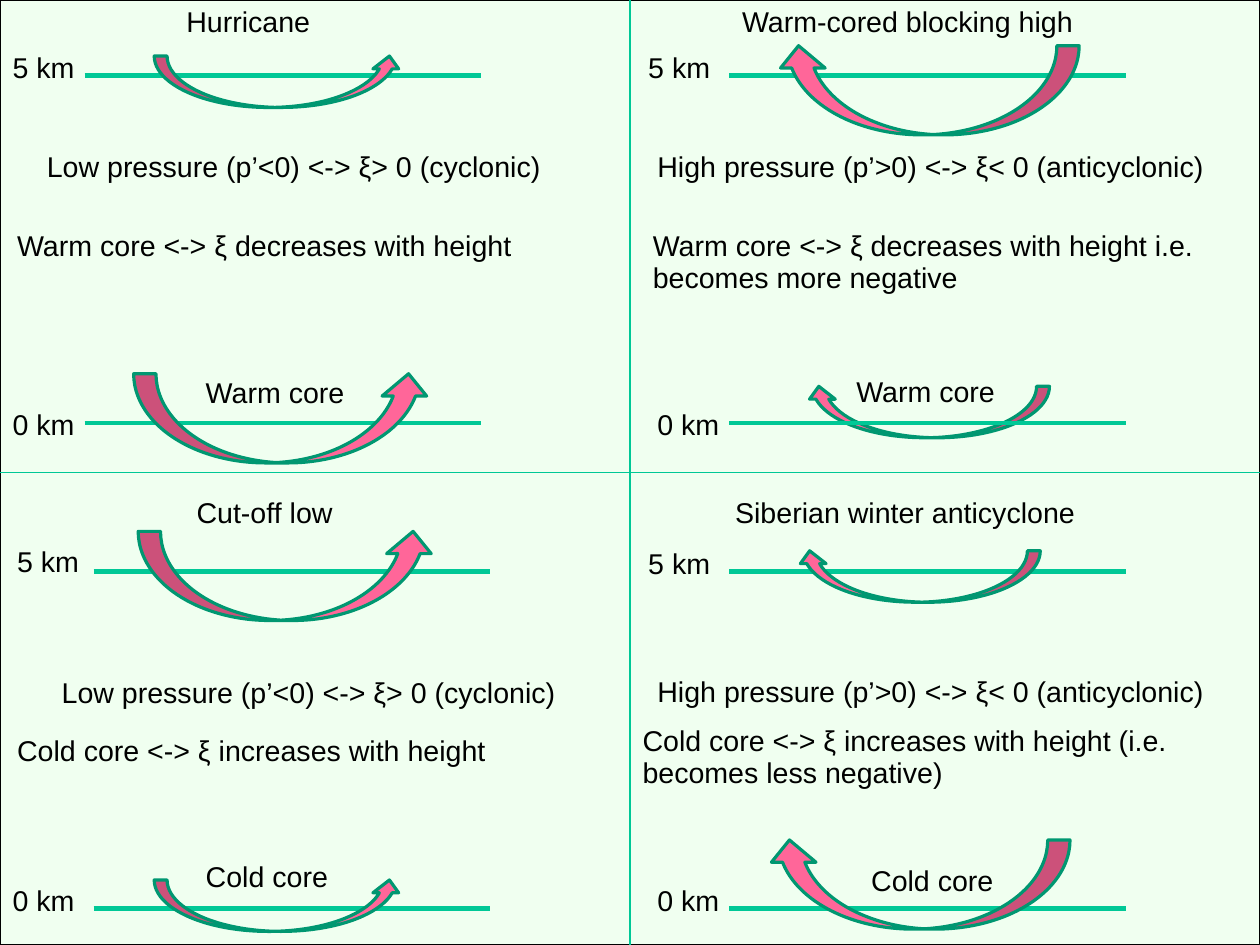
from dataclasses import dataclass

import pptx
import pptx.dml.color
import pptx.enum.shapes
import pptx.enum.text
import pptx.oxml.ns
import pptx.util
from lxml import etree

SLIDE_WIDTH, SLIDE_HEIGHT = pptx.util.Cm(28), pptx.util.Cm(21)
CELL = pptx.util.Inches(0.1)
COLUMNS, ROWS = SLIDE_WIDTH / CELL, SLIDE_HEIGHT / CELL
PANEL_COLUMNS, PANEL_ROWS = COLUMNS / 2, ROWS / 2
LINE_HEIGHT = 3.9
LEVEL_COLUMNS = 34.7
MINT, GREEN, DARK_GREEN, PINK, BLACK = "F0FFF0", "00C896", "009771", "FF6699", "000000"


@dataclass(frozen=True)
class Label:
    text: str
    column: float
    row: float
    columns: float
    rows: float = LINE_HEIGHT


@dataclass(frozen=True)
class Flow:
    column: float
    row: float
    columns: float
    rows: float
    behind: bool = False


@dataclass(frozen=True)
class Panel:
    column: int
    row: int
    anticyclonic: bool
    heading: Label
    level_column: float
    level_rows: tuple[float, float]
    labels: tuple[Label, ...]
    flows: tuple[Flow, ...]


LOW_PRESSURE = "Low pressure (p’<0) <-> ξ> 0 (cyclonic)"
HIGH_PRESSURE = "High pressure (p’>0) <-> ξ< 0 (anticyclonic)"

PANELS = (
    Panel(
        0, 0, False, Label("Hurricane", 15.2, 0, 20), 7.4, (6.6, 37),
        (
            Label("5 km", 0, 4, 10),
            Label("0 km", 0, 35.3, 10),
            Label("Warm core", 16.9, 32.5, 14.8),
            Label(LOW_PRESSURE, 3, 12.7, 47.7),
            Label("Warm core <-> ξ decreases with height", 0.4, 19.6, 54.7),
        ),
        (Flow(13.5, 4.9, 21.7, 4.5), Flow(11.7, 32.7, 26, 7.8)),
    ),
    Panel(
        1, 0, True, Label("Warm-cored blocking high", 8.7, 0, 33), 8.7, (6.6, 37),
        (
            Label("5 km", 0.5, 4, 10),
            Label("0 km", 1.3, 35.3, 10),
            Label("Warm core", 18.7, 32.4, 14.8),
            Label(HIGH_PRESSURE, 1.3, 12.7, 51.6),
            Label("Warm core <-> ξ decreases with height i.e. becomes more negative",
                  0.9, 19.6, 54.7, 6.7),
        ),
        (Flow(12.8, 4, 26.5, 7.8), Flow(15.4, 33.8, 21.3, 4.5, behind=True)),
    ),
    Panel(
        0, 1, False, Label("Cut-off low", 16.1, 1.65, 24.3), 8.2, (8.65, 38.15),
        (
            Label("5 km", 0.4, 5.95, 10),
            Label("0 km", 0, 35.55, 10),
            Label("Cold core", 16.9, 33.45, 14.8),
            Label(LOW_PRESSURE, 4.3, 17.35, 47.7),
            Label("Cold core <-> ξ increases with height", 0.4, 22.45, 54.7),
        ),
        (Flow(12.1, 5.15, 26, 7.8), Flow(13.5, 35.65, 21.7, 4.5)),
    ),
    Panel(
        1, 1, True, Label("Siberian winter anticyclone", 8.1, 1.65, 38.8), 8.7, (8.65, 38.15),
        (
            Label("5 km", 0.5, 6.05, 10),
            Label("0 km", 1.3, 35.55, 10),
            Label("Cold core", 20, 33.85, 14.8),
            Label(HIGH_PRESSURE, 1.3, 17.25, 51.6),
            Label("Cold core <-> ξ increases with height (i.e. becomes less negative)",
                  0, 21.55, 54.7, 6.7),
        ),
        (Flow(14.6, 6.85, 21.3, 4.5), Flow(12, 32.15, 26.5, 7.8)),
    ),
)


def cells(count: float) -> int:
    return round(count * CELL)


def colour(value: str) -> pptx.dml.color.RGBColor:
    return pptx.dml.color.RGBColor.from_string(value)


def panel_area(panel: Panel, item: Label | Flow) -> tuple[int, int, int, int]:
    return (
        cells(panel.column * PANEL_COLUMNS + item.column),
        cells(panel.row * PANEL_ROWS + item.row),
        cells(item.columns),
        cells(item.rows),
    )


def write_label(box, text: str) -> None:
    frame = box.text_frame
    frame.text = text
    frame.word_wrap = True
    frame.auto_size = pptx.enum.text.MSO_AUTO_SIZE.SHAPE_TO_FIT_TEXT
    frame.vertical_anchor = pptx.enum.text.MSO_ANCHOR.TOP
    frame.margin_left = frame.margin_right = pptx.util.Inches(0.11)
    frame.margin_top = frame.margin_bottom = pptx.util.Inches(0.06)
    para = frame.paragraphs[0]
    para.alignment = pptx.enum.text.PP_ALIGN.LEFT
    para.line_spacing = 0.93
    para.space_before = pptx.util.Pt(0)
    span = para.runs[0]
    span.font.name = "Arial"
    span.font.size = pptx.util.Pt(18)
    span.font.bold = False
    span.font.color.rgb = colour(BLACK)


def fill_heading(box, panel: Panel) -> None:
    box.left, box.top, box.width, box.height = panel_area(panel, panel.heading)
    write_label(box, panel.heading.text)
    properties = box.text_frame.paragraphs[0]._p.get_or_add_pPr()
    properties.set("marL", "0")
    properties.set("indent", "0")
    etree.SubElement(properties, pptx.oxml.ns.qn("a:buNone"))


def add_line(page, start: tuple[float, float], end: tuple[float, float], width: float):
    line = page.shapes.add_connector(
        pptx.enum.shapes.MSO_CONNECTOR.STRAIGHT, *map(cells, start + end))
    line.line.color.rgb = colour(GREEN)
    line.line.width = pptx.util.Pt(width)
    etree.SubElement(line.element.spPr, pptx.oxml.ns.qn("a:effectLst"))
    return line


def add_outlined(page, kind, area: tuple[int, int, int, int], fill: str, line: str, width: float):
    shape = page.shapes.add_shape(kind, *area)
    shape.shadow.inherit = False
    shape.fill.solid()
    shape.fill.fore_color.rgb = colour(fill)
    shape.line.color.rgb = colour(line)
    shape.line.width = pptx.util.Pt(width)
    return shape


def add_flow(page, panel: Panel, flow: Flow) -> None:
    arrow = add_outlined(page, pptx.enum.shapes.MSO_SHAPE.CURVED_UP_ARROW,
                         panel_area(panel, flow), PINK, DARK_GREEN, 2)
    if panel.anticyclonic:
        arrow.element.spPr.get_or_add_xfrm().set("flipH", "1")


def add_panel(page, panel: Panel) -> None:
    for flow in panel.flows:
        if flow.behind:
            add_flow(page, panel, flow)
    left = panel.column * PANEL_COLUMNS + panel.level_column
    for level_row in panel.level_rows:
        row = panel.row * PANEL_ROWS + level_row
        add_line(page, (left, row), (left + LEVEL_COLUMNS, row), 3)
    for flow in panel.flows:
        if not flow.behind:
            add_flow(page, panel, flow)
    for label in panel.labels:
        write_label(page.shapes.add_textbox(*panel_area(panel, label)), label.text)


def main() -> None:
    deck = pptx.Presentation()
    deck.slide_width, deck.slide_height = SLIDE_WIDTH, SLIDE_HEIGHT
    page = deck.slides.add_slide(deck.slide_layouts.get_by_name("Comparison"))
    *headings, spare = page.placeholders
    spare.element.getparent().remove(spare.element)
    for box, panel in zip(headings, PANELS):
        fill_heading(box, panel)
    frame = add_outlined(page, pptx.enum.shapes.MSO_SHAPE.RECTANGLE,
                         (0, 0, SLIDE_WIDTH, SLIDE_HEIGHT), MINT, BLACK, 0.75)
    page.shapes.element.insert(2, frame.element)
    for panel in PANELS:
        add_panel(page, panel)
    for start_side, end_side in ((1, 3), (0, 2)):
        divider = add_line(page, (0, 0), (COLUMNS, ROWS), 0.75)
        divider.begin_connect(frame, start_side)
        divider.end_connect(frame, end_side)
    deck.save("out.pptx")


if __name__ == "__main__":
    main()
